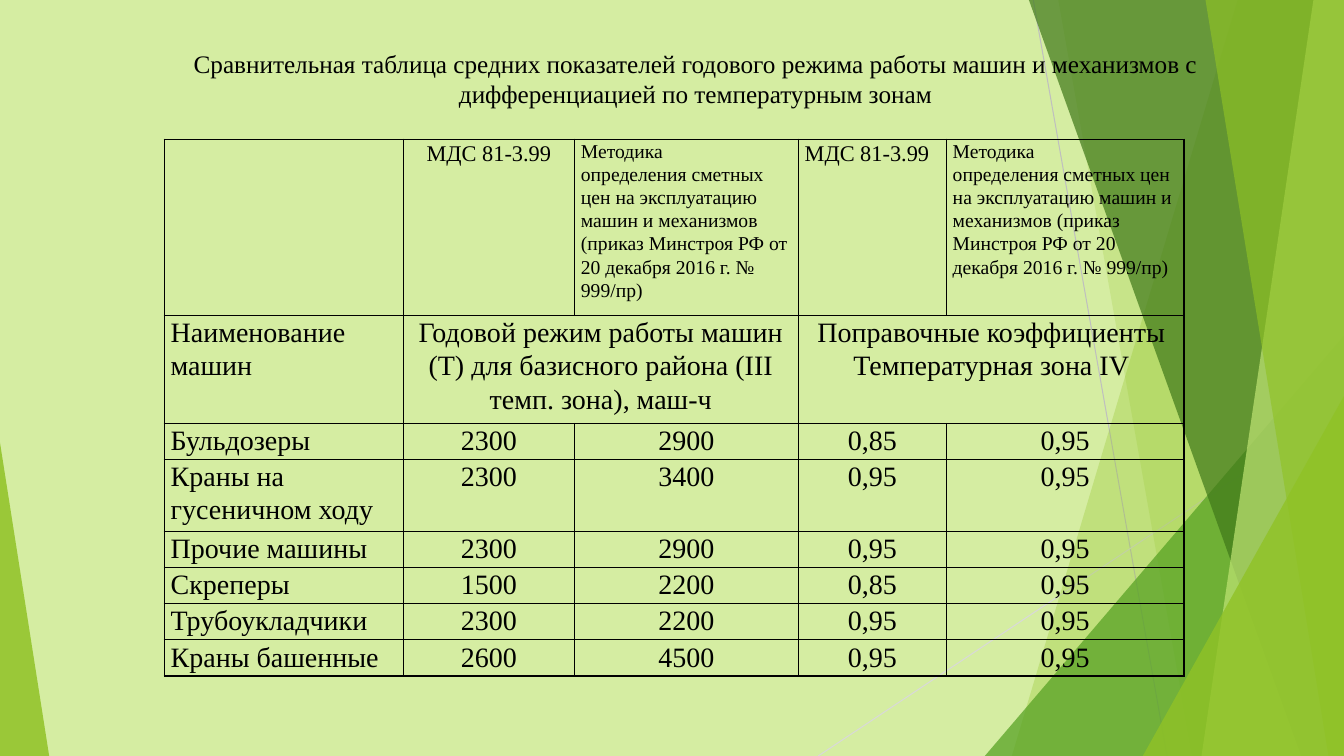
"""Builds a slide comparing yearly machine working regimes by temperature zone."""
from lxml import etree
from pptx import Presentation
from pptx.dml.color import RGBColor
from pptx.enum.shapes import MSO_CONNECTOR, MSO_SHAPE
from pptx.enum.text import PP_ALIGN
from pptx.oxml import parse_xml
from pptx.oxml.ns import nsdecls, qn
from pptx.util import Cm, Pt

LEFT, MID = PP_ALIGN.LEFT, PP_ALIGN.CENTER
STRAIGHT = MSO_CONNECTOR.STRAIGHT
TRI = MSO_SHAPE.ISOSCELES_TRIANGLE
WIDE, HIGH = 33.87, 19.05
HUES = {
    "page": "D5EDA2", "lime": "90C226", "green": "54A021", "dark": "3F7819",
    "pale": "C0E474", "gray": "BFBFBF", "mist": "D9D9D9", "ink": "000000",
}


def paint(shape, hue, alpha):
    """Fills a shape with a see-through colour and hides its outline."""
    shape.shadow.inherit = False
    shape.line.fill.background()
    shape.fill.solid()
    shape.fill.fore_color.rgb = RGBColor.from_string(HUES[hue])
    color = shape.fill._xPr.find(".//" + qn("a:srgbClr"))
    etree.SubElement(color, qn("a:alpha")).set("val", str(alpha * 1000))


def write(frame, text, size, align, space):
    """Writes one paragraph per line of text."""
    frame.text = text
    looks = {"name": "Times New Roman", "size": Pt(size)}
    for para in frame.paragraphs:
        para.alignment = align
        para.line_spacing = space
        for run in para.runs:
            for key, value in looks.items():
                setattr(run.font, key, value)
            run.font.color.rgb = RGBColor.from_string(HUES["ink"])


deck = Presentation()
deck.slide_width, deck.slide_height = Cm(WIDE), Cm(HIGH)
slide = deck.slides.add_slide(deck.slide_layouts[6])
shapes = slide.shapes
slide.background.fill.solid()
slide.background.fill.fore_color.rgb = RGBColor.from_string(HUES["page"])

rays = [
    (26.04, 0, 29.41, HIGH, "gray"),
    (WIDE, 10.24, 20.62, HIGH, "mist"),
]
for *ends, hue in rays:
    ray = shapes.add_connector(STRAIGHT, *map(Cm, ends))
    ray.line.width = Pt(0.75)
    ray.line.color.rgb = RGBColor.from_string(HUES[hue])
    etree.SubElement(ray._element.spPr, qn("a:effectLst"))

facets = [
    ("band", (31.19, 25.5), "lime", 30),
    ("band", (26.67, 30.05), "lime", 20),
    ("peak", (24.82, 8.46, 9.05, 10.59, 1), "green", 72),
    ("band", (25.93, 32.79), "dark", 70),
    ("band", (33.1, 30.28), "pale", 70),
    ("band", (30.38, 33.48), "lime", 65),
    ("peak", (28.8, 9.98, 5.07, 9.07, 1), "lime", 80),
    ("peak", (0, 11.15, 1.24, 7.9, 0), "lime", 85),
]
for kind, place, hue, alpha in facets:
    if kind == "band":
        top, foot = place
        pen = shapes.build_freeform(Cm(top), 0)
        points = [(WIDE, 0), (WIDE, HIGH), (foot, HIGH)]
        pen.add_line_segments([(Cm(x), Cm(y)) for x, y in points])
        facet = pen.convert_to_shape()
    else:
        *box, tip = place
        facet = shapes.add_shape(TRI, *map(Cm, box))
        facet.adjustments[0] = tip
    paint(facet, hue, alpha)

title = shapes.add_textbox(Cm(3.18), Cm(1.09), Cm(28.7), Cm(1.8)).text_frame
title.word_wrap = True
write(title, "Сравнительная таблица средних показателей годового режима работы "
      "машин и механизмов с дифференциацией по температурным зонам", 18, MID, 1)

old = "МДС 81-3.99"
new = ("Методика\nопределения сметных цен на эксплуатацию машин и механизмов "
       "(приказ Минстроя РФ от 20 декабря 2016 г. № 999/пр)")
rows = [
    ["", old, new, old, new],
    ["Наименование машин",
     "Годовой режим работы машин (Т) для базисного района (III темп. зона), маш-ч",
     "", "Поправочные коэффициенты Температурная зона IV", ""],
    ["Бульдозеры", "2300", "2900", "0,85", "0,95"],
    ["Краны на гусеничном ходу", "2300", "3400", "0,95", "0,95"],
    ["Прочие машины", "2300", "2900", "0,95", "0,95"],
    ["Скреперы", "1500", "2200", "0,85", "0,95"],
    ["Трубоукладчики", "2300", "2200", "0,95", "0,95"],
    ["Краны башенные", "2600", "4500", "0,95", "0,95"],
]
widths = [6.02, 4.32, 5.64, 3.73, 5.99]
heights = [4.44, 2.72, 0.91, 1.81] + [0.91] * 4
table = shapes.add_table(len(rows), len(widths), Cm(4.14), Cm(3.51),
                         Cm(sum(widths)), Cm(sum(heights))).table
table.first_row = table.horz_banding = False
for col, width in zip(table.columns, widths):
    col.width = Cm(width)
for row, height in zip(table.rows, heights):
    row.height = Cm(height)
for start in (1, 3):
    table.cell(1, start).merge(table.cell(1, start + 1))

insets = {"margin_left": Cm(0.16), "margin_right": Cm(0.16),
          "margin_top": 0, "margin_bottom": 0}
for r, row in enumerate(rows):
    for c, text in enumerate(row):
        cell = table.cell(r, c)
        for key, value in insets.items():
            setattr(cell, key, value)
        size = 20 if r else 14 if text == new else 16
        align = MID if c == 1 or (r and c) else LEFT
        write(cell.text_frame, text, size, align, 1.07)
        cell.fill.background()
        props = cell._tc.get_or_add_tcPr()
        for spot, side in enumerate("LRTB"):
            props.insert(spot, parse_xml(
                f'<a:ln{side} {nsdecls("a")} w="12700"><a:solidFill>'
                f'<a:srgbClr val="{HUES["ink"]}"/></a:solidFill></a:ln{side}>'))

deck.save("out.pptx")
